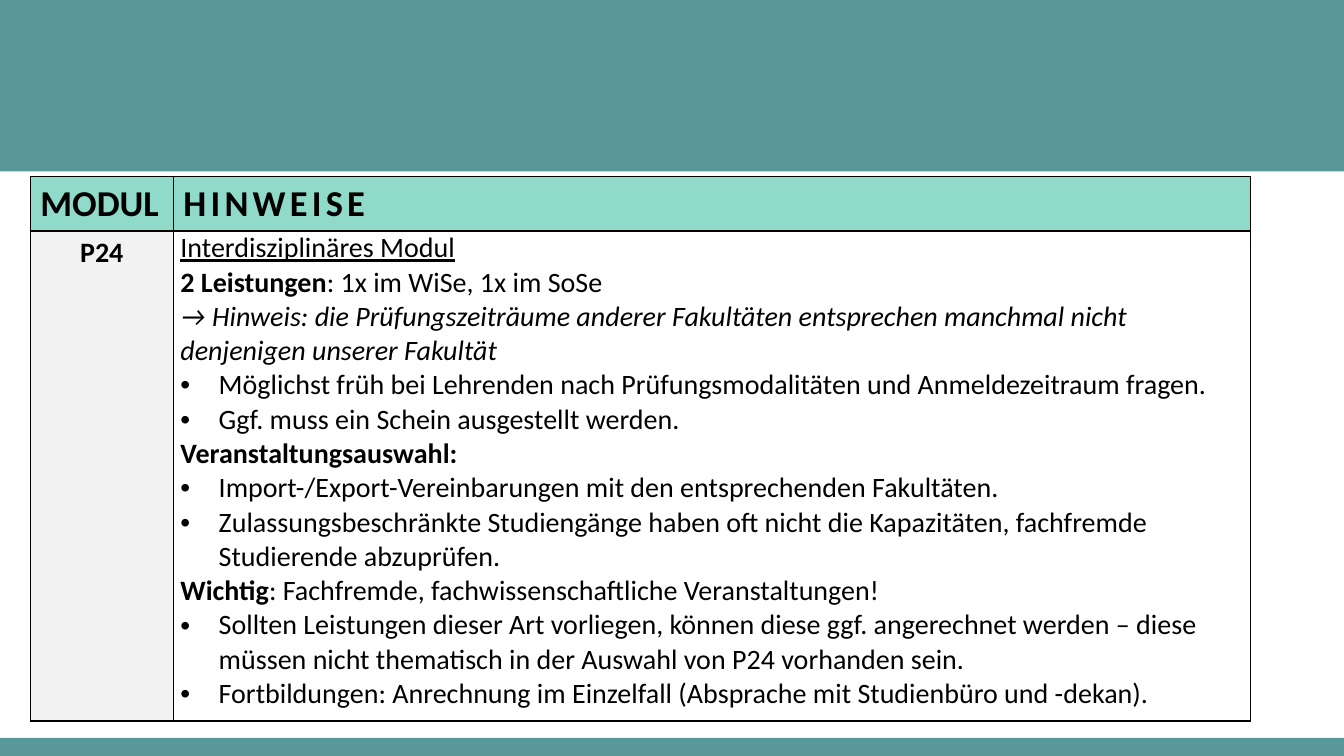
import pptx
import pptx.dml.color
import pptx.enum.shapes
import pptx.enum.text
import pptx.oxml
import pptx.oxml.ns
import pptx.util
from pptx.util import Inches

TEAL, MINT, GREY, WHITE, BLACK = "589898", "8FDAC8", "F2F2F2", "FFFFFF", "000000"
FONT = "Calibri"
SLIDE_WIDTH, SLIDE_HEIGHT = 13.33, 7.5
BANDS = [(0, 1.7), (7.32, 0.18)]  # top, height
TABLE_LEFT, TABLE_TOP = 0.3, 1.75
COLUMNS = [1.42, 10.68]
ROWS = [0.54, 4.86]
INDENT = 0.38

# Each paragraph: (bulleted, [(text, style), ...])
NOTES = [
    (False, [("Interdisziplinäres Modul", "underline")]),
    (False, [("2 Leistungen", "bold"), (": 1x im WiSe, 1x im SoSe", None)]),
    (False, [("→ Hinweis: die Prüfungszeiträume anderer Fakultäten entsprechen "
              "manchmal nicht denjenigen unserer Fakultät", "italic")]),
    (True, [("Möglichst früh bei Lehrenden nach Prüfungsmodalitäten und "
             "Anmeldezeitraum fragen.", None)]),
    (True, [("Ggf. muss ein Schein ausgestellt werden.", None)]),
    (False, [("Veranstaltungsauswahl:", "bold")]),
    (True, [("Import-/Export-Vereinbarungen mit den entsprechenden Fakultäten.", None)]),
    (True, [("Zulassungsbeschränkte Studiengänge haben oft nicht die Kapazitäten, "
             "fachfremde Studierende abzuprüfen.", None)]),
    (False, [("Wichtig", "bold"),
             (": Fachfremde, fachwissenschaftliche Veranstaltungen!", None)]),
    (True, [("Sollten Leistungen dieser Art vorliegen, können diese ggf. angerechnet "
             "werden – diese müssen nicht thematisch in der Auswahl von P24 "
             "vorhanden sein.", None)]),
    (True, [("Fortbildungen: Anrechnung im Einzelfall (Absprache mit Studienbüro "
             "und -dekan).", None)]),
]


def color(value):
    return pptx.dml.color.RGBColor.from_string(value)


def add_element(parent, tag, inner="", **attributes):
    pairs = " ".join(f'{name}="{value}"' for name, value in attributes.items())
    xml = f'<a:{tag} {pptx.oxml.ns.nsdecls("a")} {pairs}>{inner}</a:{tag}>'
    parent.append(pptx.oxml.parse_xml(xml))


def format_cell(cell, fill):
    properties = cell._tc.get_or_add_tcPr()
    line = f'<a:solidFill><a:srgbClr val="{BLACK}"/></a:solidFill>'
    for side in "LRTB":
        add_element(properties, "ln" + side, line, w=pptx.util.Pt(1))
    cell.fill.solid()
    cell.fill.fore_color.rgb = color(fill)


def add_span(para, text, size, style=None, spacing=None):
    span = para.add_run()
    span.text = text
    font = span.font
    font.name, font.size = FONT, pptx.util.Pt(size)
    font.color.rgb = color(BLACK)
    font.bold = style == "bold"
    font.italic = style == "italic"
    font.underline = style == "underline"
    if spacing:
        span._r.get_or_add_rPr().set("spc", str(spacing * 100))


def add_bullet(para):
    properties = para._p.get_or_add_pPr()
    properties.set("marL", str(Inches(INDENT)))
    properties.set("indent", str(-Inches(INDENT)))
    add_element(properties, "buFont", typeface="Arial")
    add_element(properties, "buChar", char="•")


def add_bands(page):
    for top, height in BANDS:
        band = page.shapes.add_shape(
            pptx.enum.shapes.MSO_SHAPE.RECTANGLE,
            0, Inches(top), Inches(SLIDE_WIDTH), Inches(height))
        band.shadow.inherit = False
        band.fill.solid()
        band.fill.fore_color.rgb = color(TEAL)
        band.line.fill.background()


def add_module_table(page):
    table = page.shapes.add_table(
        len(ROWS), len(COLUMNS), Inches(TABLE_LEFT), Inches(TABLE_TOP),
        Inches(sum(COLUMNS)), Inches(sum(ROWS))).table
    for column, width in zip(table.columns, COLUMNS):
        column.width = Inches(width)
    for row, height in zip(table.rows, ROWS):
        row.height = Inches(height)

    for index, (heading, spacing) in enumerate([("MODUL", None), ("HINWEISE", 3)]):
        cell = table.cell(0, index)
        format_cell(cell, MINT)
        cell.vertical_anchor = pptx.enum.text.MSO_ANCHOR.MIDDLE
        add_span(cell.text_frame.paragraphs[0], heading, 26, "bold", spacing)

    module = table.cell(1, 0)
    format_cell(module, GREY)
    para = module.text_frame.paragraphs[0]
    para.alignment = pptx.enum.text.PP_ALIGN.CENTER
    add_span(para, "P24", 20, "bold")

    notes = table.cell(1, 1)
    format_cell(notes, WHITE)
    notes.margin_left = notes.margin_right = Inches(0.07)
    notes.margin_top = notes.margin_bottom = 0
    frame = notes.text_frame
    for index, (bulleted, spans) in enumerate(NOTES):
        para = frame.add_paragraph() if index else frame.paragraphs[0]
        if bulleted:
            add_bullet(para)
        for text, style in spans:
            add_span(para, text, 20, style)


def main():
    deck = pptx.Presentation()
    deck.slide_width, deck.slide_height = Inches(SLIDE_WIDTH), Inches(SLIDE_HEIGHT)
    page = deck.slides.add_slide(deck.slide_layouts[6])
    add_bands(page)
    add_module_table(page)
    deck.save("out.pptx")


if __name__ == "__main__":
    main()
